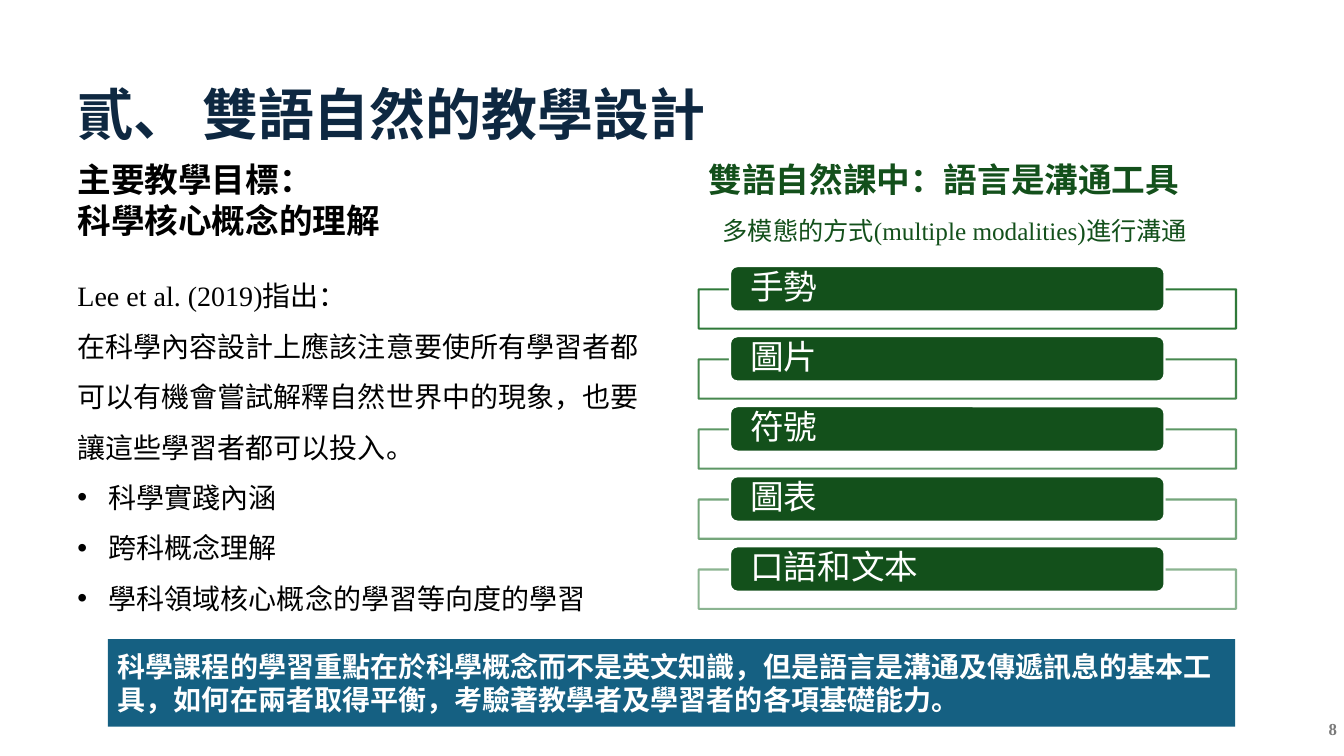
from dataclasses import dataclass

from lxml.etree import SubElement
from pptx import Presentation
from pptx.dml.color import RGBColor
from pptx.enum.shapes import MSO_SHAPE
from pptx.enum.text import MSO_ANCHOR, PP_ALIGN
from pptx.oxml.ns import qn
from pptx.util import Inches, Pt

COLORS = {
    "navy": "0E2841", "black": "000000", "green": "13501B", "outline": "196B24",
    "blue": "156082", "white": "FFFFFF", "gray": "797979",
}
LATIN = "Times New Roman"
CJK = "Noto Sans CJK TC"


@dataclass
class Mode:
    label: str
    alpha: int  # outline opacity in percent


MODES = [Mode("手勢", 90), Mode("圖片", 80), Mode("符號", 70),
         Mode("圖表", 60), Mode("口語和文本", 50)]
MODE_TOP, MODE_STEP = 2.64, 0.695


def rgb(name: str) -> RGBColor:
    return RGBColor.from_string(COLORS[name])


def add_bullet(p) -> None:
    pPr = p._p.get_or_add_pPr()
    pPr.set("marL", str(Inches(0.31)))
    pPr.set("indent", str(Inches(-0.31)))
    SubElement(pPr, qn("a:buFont")).set("typeface", "Arial")
    SubElement(pPr, qn("a:buChar")).set("char", "•")


def write(sp, paragraphs: list, *, size: float, color: str, bold: bool = False,
          align=PP_ALIGN.LEFT, anchor=MSO_ANCHOR.TOP, spacing: float = 1.0,
          margins: tuple = (0.1, 0.05), bullets_from: int = 99) -> None:
    """Each paragraph is a string or a list of (text, font) runs."""
    tf = sp.text_frame
    tf.word_wrap = True
    tf.vertical_anchor = anchor
    tf.margin_left = tf.margin_right = Inches(margins[0])
    tf.margin_top = tf.margin_bottom = Inches(margins[1])
    for i, runs in enumerate(paragraphs):
        p = tf.paragraphs[0] if i == 0 else tf.add_paragraph()
        if i >= bullets_from:
            add_bullet(p)
        p.alignment = align
        p.line_spacing = spacing
        for text, font in [(runs, LATIN)] if isinstance(runs, str) else runs:
            r = p.add_run()
            r.text = text
            r.font.name = font
            r.font.size = Pt(size)
            r.font.bold = bold
            r.font.color.rgb = rgb(color)
            SubElement(r._r.get_or_add_rPr(), qn("a:ea")).set("typeface", CJK)


def add_text(s, box: tuple, paragraphs: list, **fmt) -> None:
    write(s.shapes.add_textbox(*map(Inches, box)), paragraphs, **fmt)


def add_box(s, kind, box: tuple, fill: str = "", line: str = ""):
    sp = s.shapes.add_shape(kind, *map(Inches, box))
    sp.shadow.inherit = False
    if fill:
        sp.fill.solid()
        sp.fill.fore_color.rgb = rgb(fill)
    else:
        sp.fill.background()
    if line:
        sp.line.color.rgb = rgb(line)
        sp.line.width = Pt(1.5)
    else:
        sp.line.fill.background()
    return sp


def add_mode(s, mode: Mode, top: float) -> None:
    frame = add_box(s, MSO_SHAPE.RECTANGLE, (6.93, top + 0.23, 5.33, 0.39), line="outline")
    color = frame.line._ln.find(".//" + qn("a:srgbClr"))
    SubElement(color, qn("a:alpha")).set("val", str(mode.alpha * 1000))
    tab = add_box(s, MSO_SHAPE.ROUNDED_RECTANGLE, (7.24, top, 4.31, 0.45), "green", "white")
    write(tab, [mode.label], size=24, color="white", anchor=MSO_ANCHOR.MIDDLE,
          spacing=0.9, margins=(0.18, 0.02))


def main() -> None:
    prs = Presentation()
    prs.slide_width, prs.slide_height = Inches(13.33), Inches(7.5)
    s = prs.slides.add_slide(prs.slide_layouts[6])

    # Title
    add_text(s, (0.67, 0.54, 12, 1.17), ["貳、 雙語自然的教學設計"],
             size=40, color="navy", bold=True, anchor=MSO_ANCHOR.MIDDLE)

    # Left column: teaching goal
    add_text(s, (0.67, 2.55, 5.9, 3.58), [
        "Lee et al. (2019)指出：",
        "在科學內容設計上應該注意要使所有學習者都可以有機會嘗試解釋自然世界中的現象，也要讓這些學習者都可以投入。",
        "科學實踐內涵",
        "跨科概念理解",
        "學科領域核心概念的學習等向度的學習",
    ], size=20, color="black", spacing=1.5, bullets_from=2)
    add_text(s, (0.67, 1.53, 6.67, 0.91), ["主要教學目標：", "科學核心概念的理解"],
             size=24, color="black", bold=True)

    # Right column: modes of communication
    add_text(s, (6.93, 1.53, 6.67, 0.5), ["雙語自然課中：語言是溝通工具"],
             size=24, color="green", bold=True)
    for i, mode in enumerate(MODES):
        add_mode(s, mode, MODE_TOP + i * MODE_STEP)

    # Conclusion banner
    banner = add_box(s, MSO_SHAPE.RECTANGLE, (1.07, 6.34, 11.18, 0.87), "blue")
    write(banner, ["科學課程的學習重點在於科學概念而不是英文知識，但是語言是溝通及傳遞訊息的基本工具，"
                   "如何在兩者取得平衡，考驗著教學者及學習者的各項基礎能力。"],
          size=20, color="white", bold=True, anchor=MSO_ANCHOR.MIDDLE)

    # Subheading and page number
    add_text(s, (7.07, 2.09, 6.8, 0.4),
             [[("多模態的方式", CJK), ("(multiple modalities)", LATIN), ("進行溝通", CJK)]],
             size=18, color="green")
    add_text(s, (12.25, 7.03, 1.11, 0.4), ["8"], size=12, color="gray", bold=True,
             align=PP_ALIGN.RIGHT, anchor=MSO_ANCHOR.MIDDLE)

    prs.save("out.pptx")


if __name__ == "__main__":
    main()
